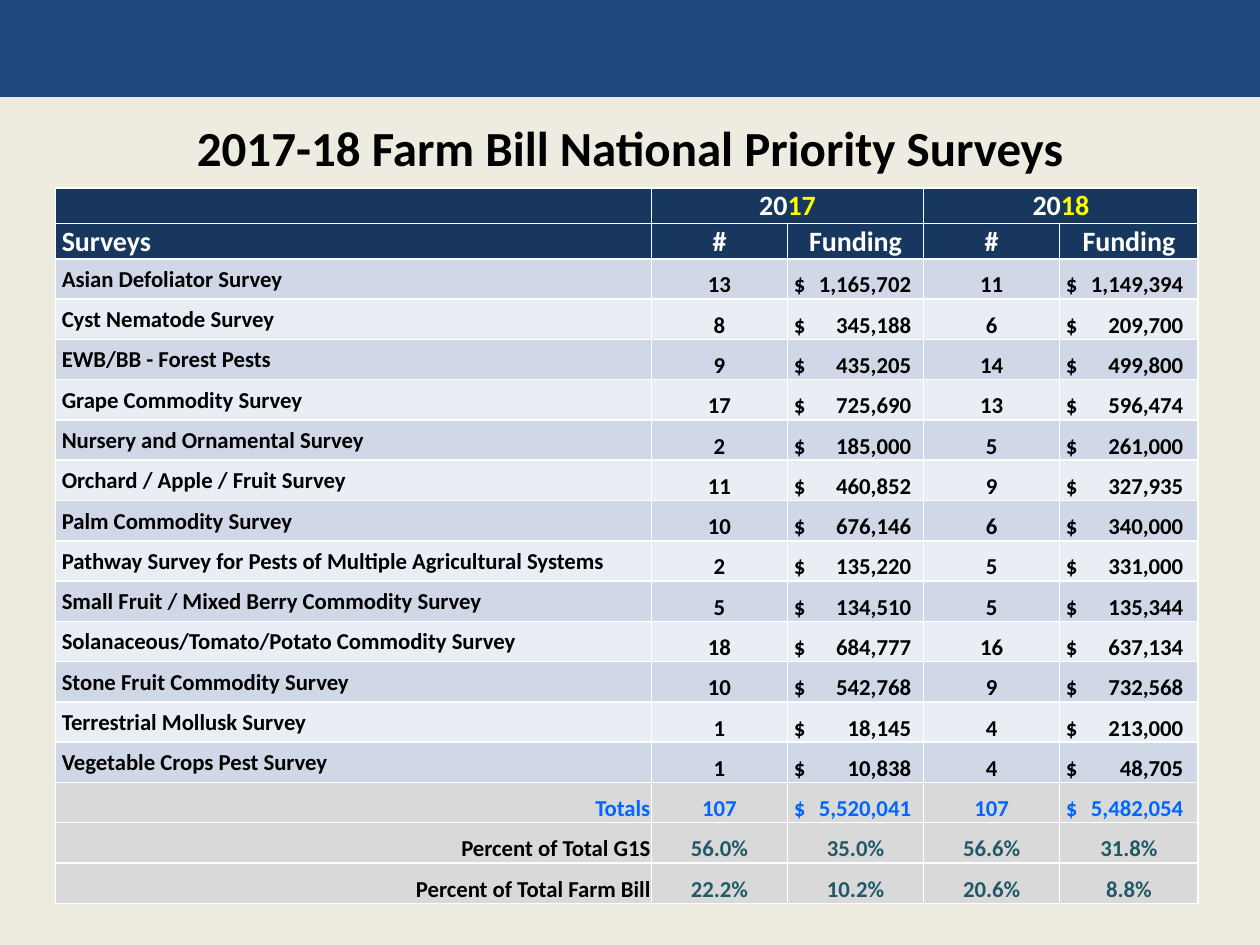
from lxml.etree import SubElement
from pptx import Presentation
from pptx.dml.color import RGBColor
from pptx.enum.shapes import MSO_SHAPE
from pptx.enum.text import MSO_ANCHOR, PP_ALIGN
from pptx.oxml import parse_xml
from pptx.oxml.ns import nsdecls, qn
from pptx.util import Inches, Pt

FONT = "Calibri"
WHITE, BLACK, YELLOW = "FFFFFF", "000000", "FFFF00"
NAVY, GRAY, BLUE, TEAL = "17375E", "D9D9D9", "0066FF", "215967"
BANDS = ("D0D8E8", "E9EDF4")
LEFT, CENTER, RIGHT = PP_ALIGN.LEFT, PP_ALIGN.CENTER, PP_ALIGN.RIGHT
MIDDLE, BOTTOM = MSO_ANCHOR.MIDDLE, MSO_ANCHOR.BOTTOM

COL_WIDTHS = (4.73, 1.08, 1.08, 1.08, 1.1)
HEADER_H, ROW_H = 0.27, 0.32
SURVEYS = [
    ("Asian Defoliator Survey", 13, 1165702, 11, 1149394),
    ("Cyst Nematode Survey", 8, 345188, 6, 209700),
    ("EWB/BB - Forest Pests", 9, 435205, 14, 499800),
    ("Grape Commodity Survey", 17, 725690, 13, 596474),
    ("Nursery and Ornamental Survey", 2, 185000, 5, 261000),
    ("Orchard / Apple / Fruit Survey", 11, 460852, 9, 327935),
    ("Palm Commodity Survey", 10, 676146, 6, 340000),
    ("Pathway Survey for Pests of Multiple Agricultural Systems", 2, 135220, 5, 331000),
    ("Small Fruit / Mixed Berry Commodity Survey", 5, 134510, 5, 135344),
    ("Solanaceous/Tomato/Potato Commodity Survey", 18, 684777, 16, 637134),
    ("Stone Fruit Commodity Survey", 10, 542768, 9, 732568),
    ("Terrestrial Mollusk Survey", 1, 18145, 4, 213000),
    ("Vegetable Crops Pest Survey", 1, 10838, 4, 48705),
]
TOTALS = ("Totals", 107, 5520041, 107, 5482054)
PERCENTS = [
    ("Percent of Total G1S", "56.0%", "35.0%", "56.6%", "31.8%"),
    ("Percent of Total Farm Bill", "22.2%", "10.2%", "20.6%", "8.8%"),
]


def rgb(value):
    return RGBColor.from_string(value)


def add_run(p, text, size, color):
    r = p.add_run()
    r.text = text
    r.font.size, r.font.bold, r.font.name = Pt(size), True, FONT
    r.font.color.rgb = rgb(color)
    return r


def add_borders(cell, color=WHITE, width=1):
    tcPr = cell._tc.get_or_add_tcPr()
    for side in ("lnL", "lnR", "lnT", "lnB"):
        ln = SubElement(tcPr, qn(f"a:{side}"), w=str(Pt(width)))
        fill = SubElement(ln, qn("a:solidFill"))
        SubElement(fill, qn("a:srgbClr"), val=color)


def add_right_tab(p, position):
    tabs = SubElement(p._p.get_or_add_pPr(), qn("a:tabLst"))
    SubElement(tabs, qn("a:tab"), pos=str(position), algn="r")


def fill_cell(cell, runs, size, fill, align=CENTER, anchor=BOTTOM, tab=None):
    """Style a cell and write its (text, colour) runs."""
    add_borders(cell)
    cell.fill.solid()
    cell.fill.fore_color.rgb = rgb(fill)
    cell.vertical_anchor = anchor
    cell.margin_left = Inches(0.05 if align == LEFT else 0.01)
    cell.margin_right = cell.margin_top = Inches(0.01)
    cell.margin_bottom = 0
    p = cell.text_frame.paragraphs[0]
    p.alignment = align
    if tab:
        add_right_tab(p, tab)
    for text, color in runs:
        add_run(p, text, size, color)
    if not runs:
        SubElement(p._p, qn("a:endParaRPr"), sz=str(size * 100))


def fill_header(table):
    for col in range(5):
        year = {1: "17", 3: "18"}.get(col)
        runs = [("20", WHITE), (year, YELLOW)] if year else []
        fill_cell(table.cell(0, col), runs, 16, NAVY, anchor=MIDDLE)
    for col in (1, 3):
        table.cell(0, col).merge(table.cell(0, col + 1))
    for col, text in enumerate(("Surveys", "#", "Funding", "#", "Funding")):
        align = CENTER if col else LEFT
        fill_cell(table.cell(1, col), [(text, WHITE)], 16, NAVY, align, MIDDLE)


def fill_values(table, row, values, color, fill):
    """Write counts and percentages centred, and dollar amounts on a right tab."""
    for col, value in enumerate(values, 1):
        cell = table.cell(row, col)
        if col % 2 == 0 and isinstance(value, int):
            fill_cell(cell, [(f"$\t{value:,}", color)], 13, fill, LEFT, tab=Inches(0.93))
        else:
            fill_cell(cell, [(str(value), color)], 13, fill)


def add_survey_table(s, left, top):
    row_count = 2 + len(SURVEYS) + 1 + len(PERCENTS)
    heights = [HEADER_H] * 2 + [ROW_H] * (row_count - 2)
    frame = s.shapes.add_table(row_count, len(COL_WIDTHS), left, top,
                               Inches(sum(COL_WIDTHS)), Inches(sum(heights)))
    table = frame.table
    for column, width in zip(table.columns, COL_WIDTHS):
        column.width = Inches(width)
    for table_row, height in zip(table.rows, heights):
        table_row.height = Inches(height)

    fill_header(table)
    for i, (name, *values) in enumerate(SURVEYS):
        band = BANDS[i % 2]
        fill_cell(table.cell(i + 2, 0), [(name, BLACK)], 13, band, LEFT, MIDDLE)
        fill_values(table, i + 2, values, BLACK, band)

    summary = [(TOTALS, BLUE, BLUE)] + [(line, BLACK, TEAL) for line in PERCENTS]
    for row, (line, label_color, color) in enumerate(summary, 2 + len(SURVEYS)):
        fill_cell(table.cell(row, 0), [(line[0], label_color)], 13, GRAY, RIGHT)
        fill_values(table, row, line[1:], color, GRAY)


def add_top_band(s, left, top, width, height):
    band = s.shapes.add_shape(MSO_SHAPE.RECTANGLE, left, top, width, height)
    band.shadow.inherit = False
    band.fill.solid()
    band.fill.fore_color.rgb = rgb("1F497D")
    band.line.fill.background()


def set_title(s, text, left, top, width, height):
    title = s.shapes.title
    title.left, title.top, title.width, title.height = left, top, width, height
    tf = title.text_frame
    tf.word_wrap = True
    tf.vertical_anchor = MSO_ANCHOR.MIDDLE
    p = tf.paragraphs[0]
    p.alignment = CENTER
    r = add_run(p, text, 28, BLACK)
    shadow = parse_xml(
        f'<a:effectLst {nsdecls("a")}><a:outerShdw blurRad="38100" dist="38100" '
        'dir="2700000" algn="tl"><a:srgbClr val="000000"><a:alpha val="43000"/>'
        '</a:srgbClr></a:outerShdw></a:effectLst>')
    r.font._element.find(qn("a:solidFill")).addnext(shadow)


def main():
    prs = Presentation()
    prs.slide_width, prs.slide_height = Inches(10), Inches(7.5)
    s = prs.slides.add_slide(prs.slide_layouts[5])
    s.background.fill.solid()
    s.background.fill.fore_color.rgb = rgb("EEECE1")
    add_top_band(s, 0, 0, prs.slide_width, Inches(0.77))
    set_title(s, "2017-18 Farm Bill National Priority Surveys",
              Inches(0.5), Inches(0.78), Inches(9), Inches(0.78))
    add_survey_table(s, Inches(0.44), Inches(1.49))
    prs.save("out.pptx")


if __name__ == "__main__":
    main()
